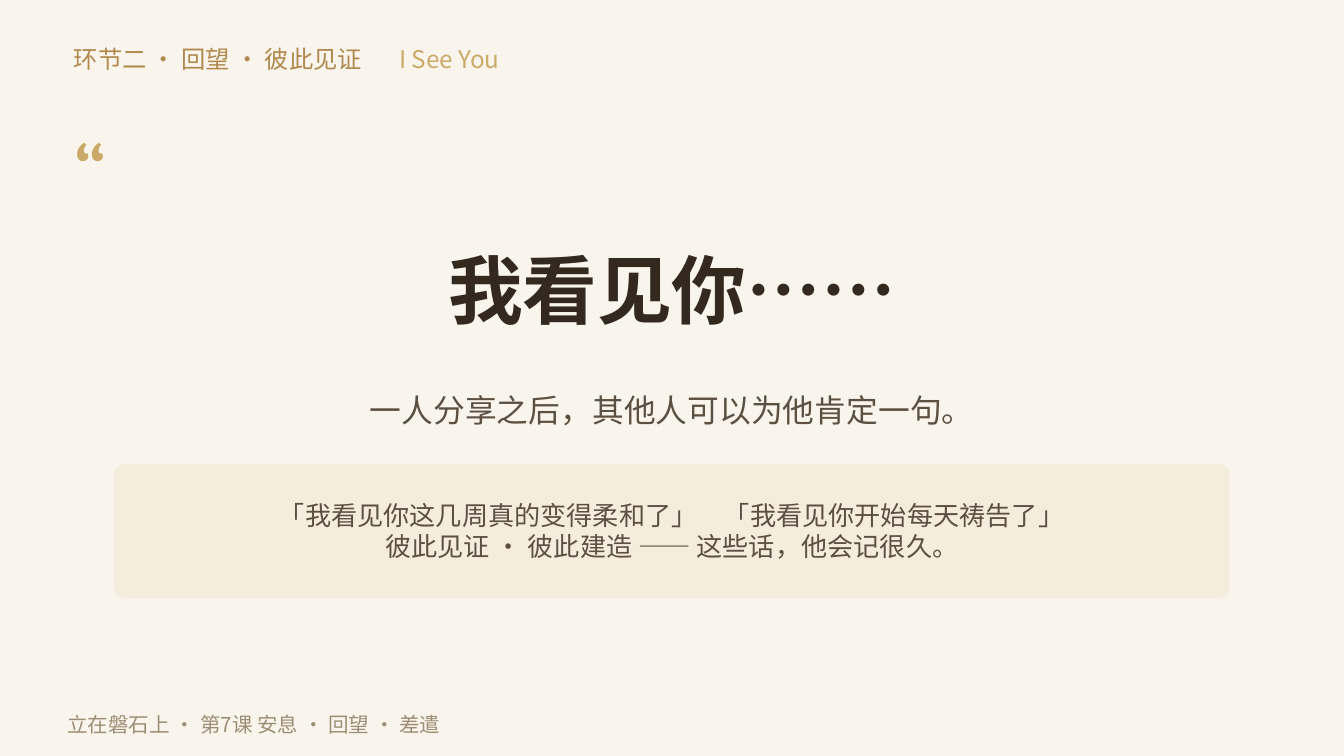
from dataclasses import dataclass

from lxml import etree
from pptx import Presentation
from pptx import util as u
from pptx.dml.color import RGBColor
from pptx.enum import shapes, text
from pptx.oxml import ns

PX = 4572


@dataclass(frozen=True)
class Theme:
    """Colours, fonts and type sizes of the deck."""
    paper: str = "FAF5EC"
    panel: str = "F4ECDD"
    ink: str = "33291E"
    body: str = "5C5043"
    bronze: str = "B0894F"
    gold: str = "CBA968"
    muted: str = "9C8E76"
    sans: str = "Noto Sans CJK SC"
    serif: str = "Cambria"
    header: int = 13
    mark: int = 48
    title: int = 40
    lead: int = 17
    example: int = 14
    footer: int = 11


THEME = Theme()


def px(count):
    """Turn px into EMU."""
    return u.Emu(count * PX)


def add_panel(page, box, kind, colour):
    """Add a plain filled shape without line or shadow."""
    panel = page.shapes.add_shape(kind, *map(px, box))
    panel.shadow.inherit = False
    panel.fill.solid()
    panel.fill.fore_color.rgb = RGBColor.from_string(colour)
    panel.line.fill.background()
    return panel


def add_span(para, words, size, colour, face=THEME.sans, bold=False):
    """Add one run with the same face for Latin and East Asian text."""
    span = para.add_run()
    span.text = words
    span.font.size = u.Pt(size)
    span.font.bold = bold
    span.font.name = face
    span.font.color.rgb = RGBColor.from_string(colour)
    east = etree.SubElement(span.font._element, ns.qn("a:ea"))
    east.set("typeface", face)


def add_frame(page, box):
    """Add a wrapping text box without insets, centred vertically."""
    frame = page.shapes.add_textbox(*map(px, box)).text_frame
    frame.word_wrap = True
    frame.vertical_anchor = text.MSO_ANCHOR.MIDDLE
    frame.margin_left = frame.margin_right = 0
    frame.margin_top = frame.margin_bottom = 0
    return frame


def add_line(page, box, words, size, colour, centred=False, **style):
    """Add a text box that holds one line."""
    para = add_frame(page, box).paragraphs[0]
    if centred:
        para.alignment = text.PP_ALIGN.CENTER
    add_span(para, words, size, colour, **style)


def add_header(page, box):
    """Add the section name with its English title at a tab stop."""
    para = add_frame(page, box).paragraphs[0]
    stops = etree.SubElement(para._p.get_or_add_pPr(), ns.qn("a:tabLst"))
    etree.SubElement(stops, ns.qn("a:tab"), pos=str(px(484)), algn="l")
    add_span(para, "环节二 · 回望 · 彼此见证\t", THEME.header, THEME.bronze)
    add_span(para, "I See You", THEME.header, THEME.gold)


def add_quote(page, box):
    """Add the quotation mark, the title and the lead below it."""
    left, top, width, _ = box
    add_line(page, (left + 10, top, 200, 120), "“", THEME.mark, THEME.gold,
             face=THEME.serif)
    add_line(page, (left, top + 160, width, 160), "我看见你……", THEME.title,
             THEME.ink, centred=True, bold=True)
    add_line(page, (left, top + 380, width, 80),
             "一人分享之后，其他人可以为他肯定一句。", THEME.lead, THEME.body,
             centred=True)


def add_examples(page, box):
    """Add the rounded panel with the example sentences."""
    left, top, width, height = box
    panel = add_panel(page, box, shapes.MSO_SHAPE.ROUNDED_RECTANGLE,
                      THEME.panel)
    panel.adjustments[0] = 0.08
    frame = add_frame(page, (left + 60, top + 30, width - 120, height - 60))
    sentences = ("「我看见你这几周真的变得柔和了」　「我看见你开始每天祷告了」",
                 "彼此见证 · 彼此建造 —— 这些话，他会记很久。")
    for index, words in enumerate(sentences):
        para = frame.add_paragraph() if index else frame.paragraphs[0]
        para.alignment = text.PP_ALIGN.CENTER
        add_span(para, words, THEME.example, THEME.body)


def add_footer(page, box):
    """Add the course and lesson line."""
    add_line(page, box, "立在磐石上 · 第7课 安息 · 回望 · 差遣",
             THEME.footer, THEME.muted)


def main():
    """Build the deck and save it."""
    deck = Presentation()
    deck.slide_width, deck.slide_height = px(2000), px(1125)
    page = deck.slides.add_slide(deck.slide_layouts[6])
    add_panel(page, (0, 0, 2000, 1125), shapes.MSO_SHAPE.RECTANGLE,
              THEME.paper)
    add_header(page, (110, 56, 1700, 64))
    add_quote(page, (100, 190, 1800, 460))
    add_examples(page, (170, 690, 1660, 200))
    add_footer(page, (100, 1050, 1500, 56))
    deck.save("out.pptx")


if __name__ == "__main__":
    main()
